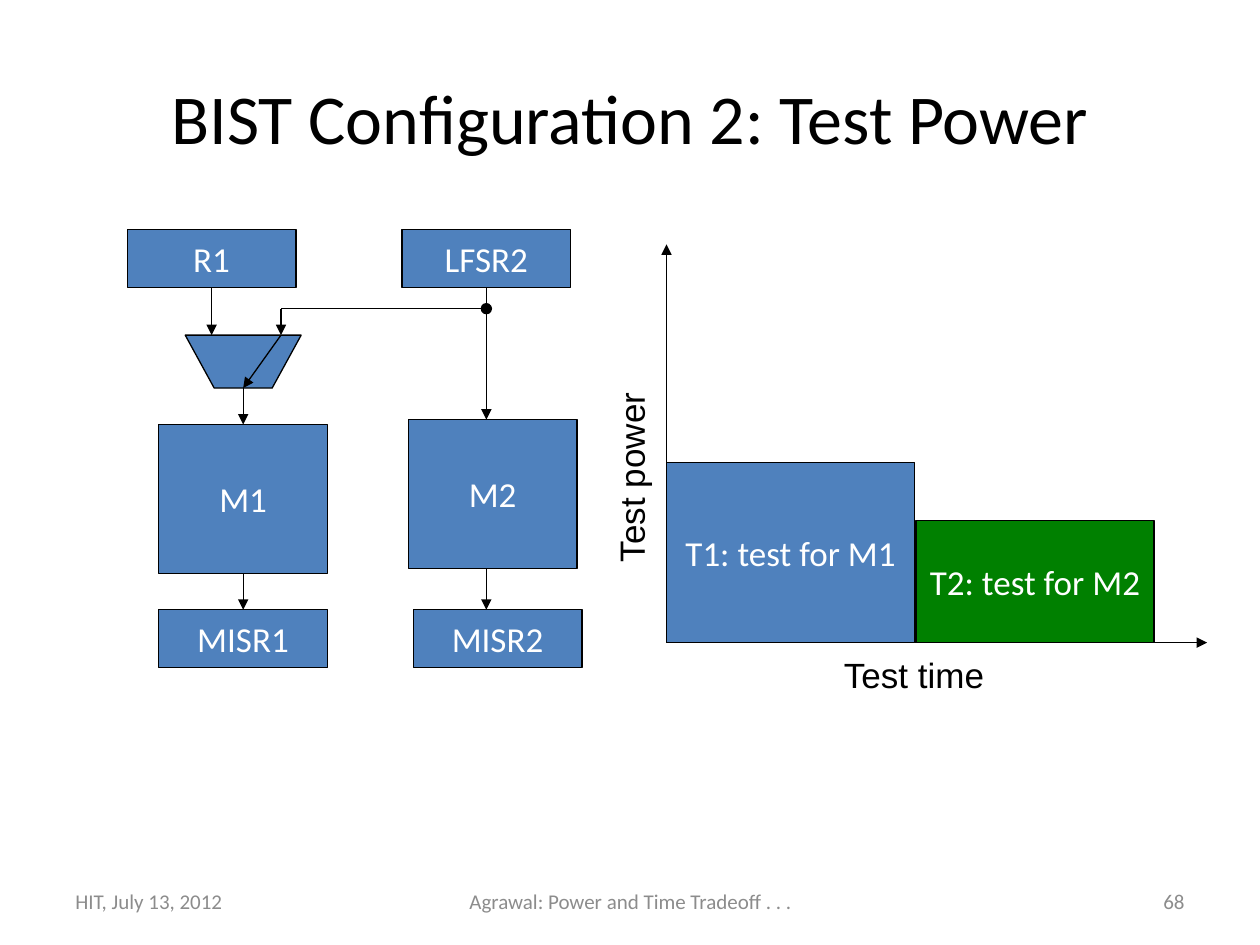
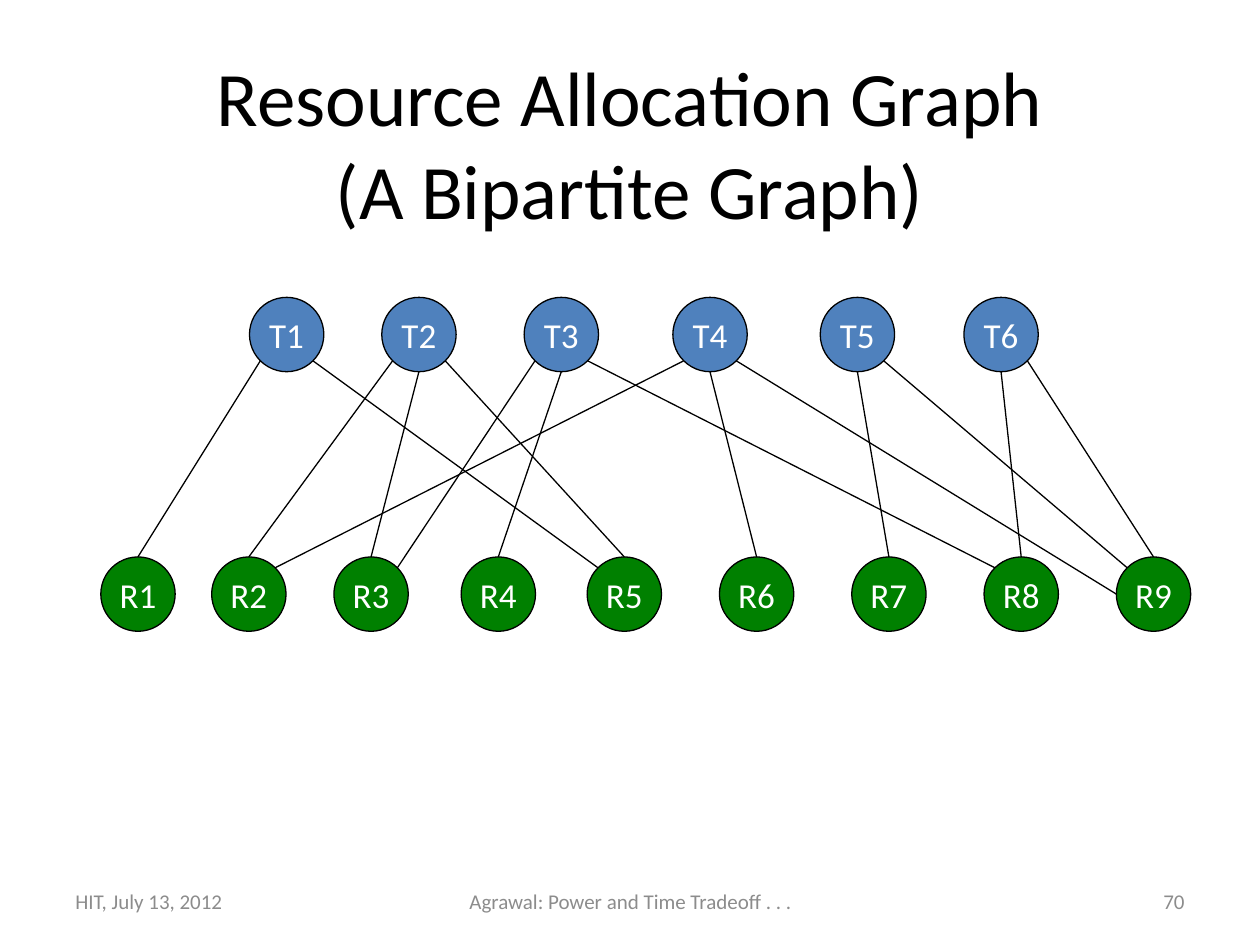
from math import sqrt
from lxml.etree import SubElement as Sub
from pptx import Presentation
from pptx.dml.color import RGBColor as RGB
from pptx.enum.shapes import MSO_CONNECTOR as LINK, MSO_SHAPE as KIND
from pptx.enum.text import MSO_ANCHOR as ANCHOR, PP_ALIGN as ALIGN
from pptx.oxml.ns import qn
from pptx.util import Inches, Pt

BLUE = RGB(0x4F, 0x81, 0xBD)
GREEN = RGB(0, 0x80, 0)
BLACK = RGB(0, 0, 0)
WHITE = RGB(255, 255, 255)
GRAY = RGB(0x8C, 0x8C, 0x8C)
DATE = "HIT, July 13, 2012"
TALK = "Agrawal: Power and Time Tradeoff . . ."

NODE = 0.59
TASK_TOP, TOOL_TOP = 2.36, 4.42
TASKS = (1.98, 3.03, 4.16, 5.34, 6.51, 7.65)
TOOLS = (0.8, 1.68, 2.65, 3.66, 4.66, 5.71, 6.76, 7.81, 8.86)
SITES = {"N": (0, -1), "S": (0, 1), "W": (-1, 0),
         "SW": (-sqrt(0.5), sqrt(0.5)), "SE": (sqrt(0.5), sqrt(0.5)),
         "NW": (-sqrt(0.5), -sqrt(0.5)), "NE": (sqrt(0.5), -sqrt(0.5))}
EDGES = (
    (1, "SW", 1, "N"), (1, "SE", 5, "NW"),
    (2, "SW", 2, "N"), (2, "S", 3, "N"), (2, "SE", 5, "N"),
    (3, "SW", 3, "NE"), (3, "S", 4, "N"), (3, "SE", 8, "NW"),
    (4, "SW", 2, "NE"), (4, "S", 6, "N"), (4, "SE", 9, "W"),
    (5, "S", 7, "N"), (5, "SE", 9, "NW"),
    (6, "S", 8, "N"), (6, "SE", 9, "N"),
)


def write(frame, text, size=20, font="Calibri", color=WHITE,
          align=ALIGN.CENTER, anchor=ANCHOR.MIDDLE, wrap=False):
    frame.word_wrap = wrap
    frame.vertical_anchor = anchor
    para = frame.paragraphs[0]
    para.text = text
    para.alignment = align
    for run in para.runs:
        run.font.size = Pt(size)
        run.font.name = font
        run.font.color.rgb = color


def label(slide, text, x, y, w, h, turn=0, **style):
    box = slide.shapes.add_textbox(*map(Inches, (x, y, w, h)))
    box.rotation = turn
    write(box.text_frame, text, **style)


def paint(shape, fill):
    shape.shadow.inherit = False
    shape.fill.solid()
    shape.fill.fore_color.rgb = fill
    shape.line.color.rgb = BLACK
    shape.line.width = Pt(0.75)


def block(slide, text, x, y, w, h, fill=BLUE, kind=KIND.RECTANGLE):
    shape = slide.shapes.add_shape(kind, *map(Inches, (x, y, w, h)))
    paint(shape, fill)
    if text:
        write(shape.text_frame, text)


def line(slide, start, end, arrow=True):
    link = slide.shapes.add_connector(
        LINK.STRAIGHT, *map(Inches, (*start, *end)))
    link.line.color.rgb = BLACK
    link.line.width = Pt(0.75)
    if arrow:
        Sub(link.line._get_or_add_ln(), qn("a:tailEnd"), type="triangle")
    Sub(link._element.spPr, qn("a:effectLst"))


def mux(slide, *points):
    first, *rest = [tuple(map(Inches, point)) for point in points]
    pen = slide.shapes.build_freeform(*first)
    pen.add_line_segments(rest, close=True)
    paint(pen.convert_to_shape(), BLUE)


def page(deck, title, number, high, size):
    slide = deck.slides.add_slide(deck.slide_layouts[6])
    for text, x, w, align in ((DATE, 0.5, 2.33, ALIGN.LEFT),
                              (TALK, 3.42, 3.17, ALIGN.CENTER),
                              (number, 7.17, 2.33, ALIGN.RIGHT)):
        label(slide, text, x, 6.95, w, 0.4,
              size=12, color=GRAY, align=align, wrap=True)
    label(slide, title, 0.5, 0.3, 9, high, size=size, color=BLACK, wrap=True)
    return slide


def circuit(slide):
    wide, low, tall = 1.34, 0.46, 1.18
    for text, x, y, h in (("R1", 1.01, 1.82, low), ("LFSR2", 3.19, 1.82, low),
                          ("M1", 1.26, 3.37, tall), ("M2", 3.24, 3.33, tall),
                          ("MISR1", 1.26, 4.84, low),
                          ("MISR2", 3.28, 4.84, low)):
        block(slide, text, x, y, wide, h)
    mux(slide, (1.47, 2.66), (1.7, 3.08), (2.16, 3.08), (2.39, 2.66))
    for x, top, end in ((1.68, 2.28, 2.66), (3.86, 2.28, 3.33),
                        (1.93, 3.08, 3.37), (1.93, 4.55, 4.84),
                        (3.86, 4.51, 4.84), (2.23, 2.45, 2.66)):
        line(slide, (x, top), (x, end))
    line(slide, (3.86, 2.45), (2.23, 2.45), arrow=False)
    block(slide, "", 3.82, 2.41, 0.08, 0.08, BLACK, KIND.OVAL)
    line(slide, (2.23, 2.66), (1.93, 3.08))


def power(slide):
    left, base = 5.29, 5.1
    line(slide, (left, base), (9.58, base))
    line(slide, (left, base), (left, 1.94))
    style = dict(font="Arial", color=BLACK, align=ALIGN.LEFT,
                 anchor=ANCHOR.TOP)
    label(slide, "Test time", 6.6, 5.14, 1.34, 0.43, **style)
    label(slide, "Test power", 4.18, 3.52, 1.65, 0.43, turn=270, **style)
    for text, x, w, h, fill in (("T1: test for M1", left, 1.97, 1.43, BLUE),
                                ("T2: test for M2", 7.27, 1.89, 0.97, GREEN)):
        block(slide, text, x, base - h, w, h, fill)


def site(x, y, side):
    half = NODE / 2
    dx, dy = SITES[side]
    return x + half * (1 + dx), y + half * (1 + dy)


def graph(slide):
    for mark, spots, y, fill in (("T", TASKS, TASK_TOP, BLUE),
                                 ("R", TOOLS, TOOL_TOP, GREEN)):
        for num, x in enumerate(spots, 1):
            block(slide, f"{mark}{num}", x, y, NODE, NODE, fill, KIND.OVAL)
    for task, out, tool, into in EDGES:
        line(slide, site(TASKS[task - 1], TASK_TOP, out),
             site(TOOLS[tool - 1], TOOL_TOP, into), arrow=False)


def main():
    deck = Presentation()
    deck.slide_width, deck.slide_height = Inches(10), Inches(7.5)
    first = page(deck, "BIST Configuration 2: Test Power", "68", 1.25, 40)
    circuit(first)
    power(first)
    graph(page(deck, "Resource Allocation Graph\n(A Bipartite Graph)",
               "70", 1.66, 44))
    deck.save("out.pptx")


if __name__ == "__main__":
    main()
